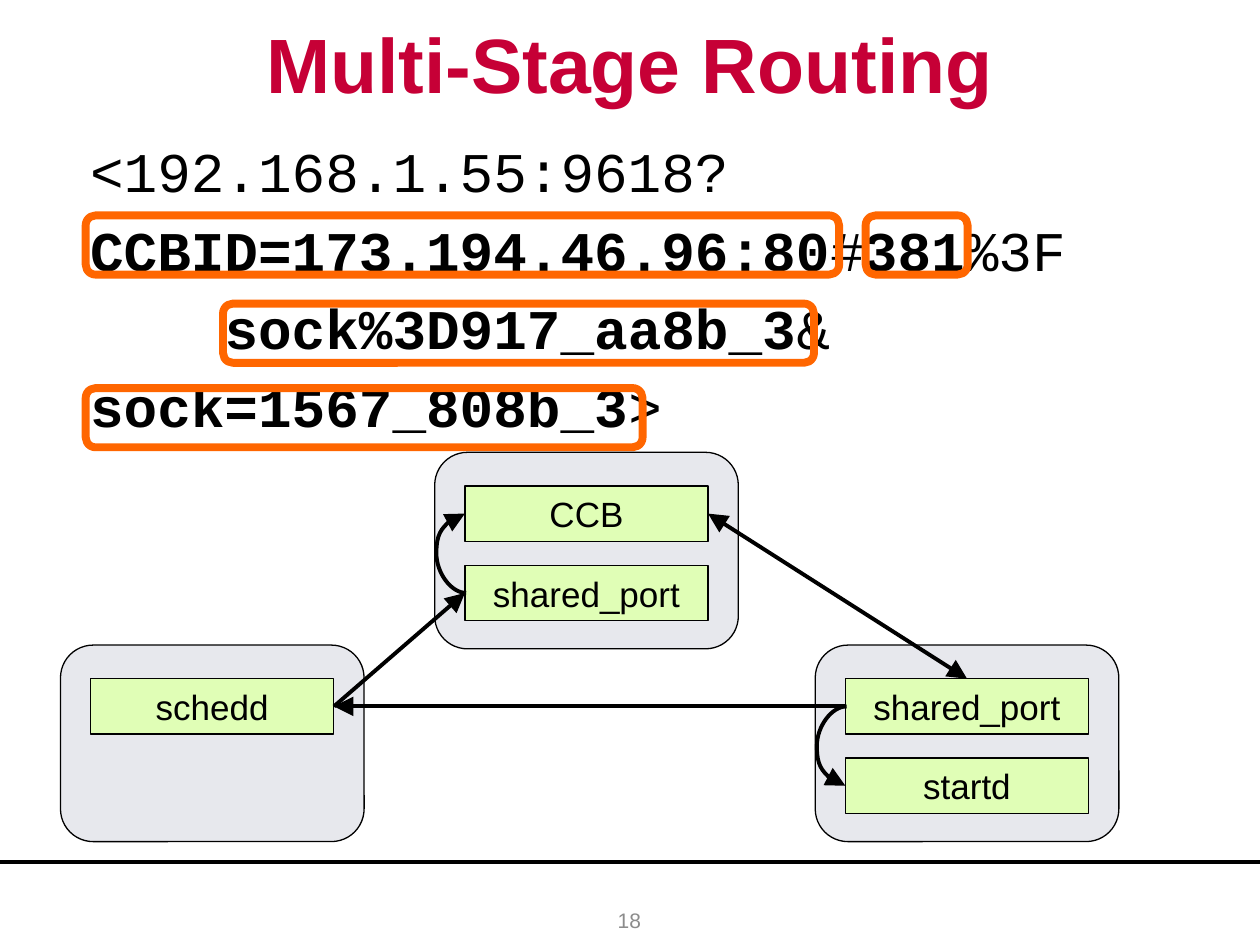
from dataclasses import dataclass

import pptx
import pptx.util
import pptx.dml.color
import pptx.enum.shapes
import pptx.enum.text
import pptx.oxml
import pptx.oxml.ns

SHAPE = pptx.enum.shapes.MSO_SHAPE
LINK = pptx.enum.shapes.MSO_CONNECTOR
ALIGN = pptx.enum.text.PP_ALIGN
ANCHOR = pptx.enum.text.MSO_ANCHOR
Pt = pptx.util.Pt

prs = pptx.Presentation()
prs.slide_width = pptx.util.Inches(10)
prs.slide_height = pptx.util.Inches(7.5)
s = prs.slides.add_slide(prs.slide_layouts[6])

# The slide is a grid of 100 columns by 100 rows.
COL = prs.slide_width / 100
ROW = prs.slide_height / 100
HOST_W, HOST_H = 24.1, 20.8
TASK_W, TASK_H = 19.3, 5.87
TASK_DX, TASK_DY, TASK_PITCH = 2.4, 3.55, 8.4
TOP, LEFT, RIGHT = 0, 1, 3  # connection sites of a rectangle
CODE_SIZE = 32
CODE_CELL = 0.6 * CODE_SIZE  # points per monospaced character


@dataclass
class CodeLine:
    indent: int  # characters
    runs: list[tuple[str, bool]]  # text, bold


@dataclass
class Host:
    col: float
    row: float
    tasks: list[str]


@dataclass
class Highlight:
    col: float
    row: float
    width: float


CODE = [
    CodeLine(1, [("<192.168.1.55:9618?", False)]),
    CodeLine(1, [("CCBID=173.194.46.96:80", True), ("#", False),
                 ("381", True), ("%3F", False)]),
    CodeLine(5, [("sock%3D917_aa8b_3", True), ("&", False)]),
    CodeLine(1, [("sock=1567_808b_3", True), (">", False)]),
]
HIGHLIGHTS = [
    Highlight(6.8, 22.8, 59.8),
    Highlight(68.7, 22.8, 8.1),
    Highlight(17.7, 32.13, 46.9),
    Highlight(6.8, 41.07, 44.2),
]
HOSTS = [
    Host(4.8, 68.27, ["schedd"]),
    Host(64.7, 68.27, ["shared_port", "startd"]),
    Host(34.5, 47.87, ["CCB", "shared_port"]),
]


def color(hex_code: str) -> pptx.dml.color.RGBColor:
    return pptx.dml.color.RGBColor.from_string(hex_code)


def grid(col: float, row: float, width: float, height: float) -> list[int]:
    return [round(col * COL), round(row * ROW), round(width * COL), round(height * ROW)]


def style_font(font, size: float, hex_code: str, name: str = "Arial", bold: bool = False) -> None:
    font.size, font.name, font.bold = Pt(size), name, bold
    font.color.rgb = color(hex_code)


def add_shape(kind, box: list[int], line: str, weight: float, fill: str = ""):
    sp = s.shapes.add_shape(kind, *box)
    sp.shadow.inherit = False
    if fill:
        sp.fill.solid()
        sp.fill.fore_color.rgb = color(fill)
    else:
        sp.fill.background()
    sp.line.color.rgb = color(line)
    sp.line.width = Pt(weight)
    return sp


def set_label(sp, text: str, size: float, hex_code: str, bold: bool = False) -> None:
    tf = sp.text_frame
    tf.word_wrap = True
    tf.vertical_anchor = ANCHOR.MIDDLE
    tf.text = text
    p = tf.paragraphs[0]
    p.alignment = ALIGN.CENTER
    style_font(p.runs[0].font, size, hex_code, bold=bold)


def add_code(box: list[int], lines: list[CodeLine]) -> None:
    tf = s.shapes.add_textbox(*box).text_frame
    tf.word_wrap = True
    for i, line in enumerate(lines):
        p = tf.add_paragraph() if i else tf.paragraphs[0]
        p.space_before = Pt(0.2 * CODE_SIZE if i else 0)
        p._p.get_or_add_pPr().set("marL", str(Pt(line.indent * CODE_CELL)))
        for text, bold in line.runs:
            r = p.add_run()
            r.text = text
            style_font(r.font, CODE_SIZE, "000000", "Courier New", bold)


def add_host(host: Host) -> list:
    """Draw a host with its stacked tasks and return the task shapes."""
    add_shape(SHAPE.ROUNDED_RECTANGLE, grid(host.col, host.row, HOST_W, HOST_H),
              "000000", 0.75, "E7E8ED")
    tasks = []
    for i, name in enumerate(host.tasks):
        box = grid(host.col + TASK_DX, host.row + TASK_DY + i * TASK_PITCH, TASK_W, TASK_H)
        sp = add_shape(SHAPE.RECTANGLE, box, "000000", 0.75, "E0FEB6")
        set_label(sp, name, 20, "000000")
        tasks.append(sp)
    return tasks


def add_line(kind, x1: int, y1: int, x2: int, y2: int, ends: tuple = ()):
    c = s.shapes.add_connector(kind, x1, y1, x2, y2)
    c.line.color.rgb = color("000000")
    c.line.width = Pt(2.25)
    ln = c.line._get_or_add_ln()
    for end in ends:
        ln.append(pptx.oxml.parse_xml(
            f'<a:{end} {pptx.oxml.ns.nsdecls("a")} type="triangle" w="lg" len="lg"/>'))
    c._element.spPr.append(pptx.oxml.parse_xml(
        f'<a:effectLst {pptx.oxml.ns.nsdecls("a")}/>'))
    return c


def add_route(source, source_site: int, target, target_site: int, both: bool = False) -> None:
    ends = ("headEnd", "tailEnd") if both else ("tailEnd",)
    c = add_line(LINK.STRAIGHT, 0, 0, 0, 0, ends)
    c.begin_connect(source, source_site)
    c.end_connect(target, target_site)


def add_handoff(source, target) -> None:
    """Curve out to the left from one task to another on the same host."""
    y1, y2 = (sp.top + sp.height // 2 for sp in (source, target))
    step = round(0.1 * COL)
    c = add_line(LINK.CURVE, source.left + step, y1, target.left, y2, ("tailEnd",))
    geom = c._element.spPr.find(pptx.oxml.ns.qn("a:prstGeom"))
    for old in list(geom):
        geom.remove(old)
    bulge = round(TASK_DX * COL / step * 100000)
    geom.append(pptx.oxml.parse_xml(
        f'<a:avLst {pptx.oxml.ns.nsdecls("a")}><a:gd name="adj1" fmla="val {bulge}"/></a:avLst>'))


rule_y = round(91.2 * ROW)
add_line(LINK.STRAIGHT, 0, rule_y, prs.slide_width, rule_y)
add_code(grid(3.5, 13.8, 91.9, 34), CODE)
set_label(s.shapes.add_textbox(*grid(0, 0, 100, 13.33)),
          "Multi-Stage Routing", 44, "C60036", bold=True)
set_label(s.shapes.add_textbox(*grid(38.3, 94.67, 23.3, 5.33)), "18", 12, "8C8C8C")

for mark in HIGHLIGHTS:
    add_shape(SHAPE.ROUNDED_RECTANGLE, grid(mark.col, mark.row, mark.width, 6.27), "FF6600", 4.5)

(schedd,), (startd_port, startd), (ccb, ccb_port) = [add_host(host) for host in HOSTS]

add_route(startd_port, TOP, ccb, RIGHT, both=True)
add_route(schedd, RIGHT, ccb_port, LEFT)
add_handoff(ccb_port, ccb)
add_route(startd_port, LEFT, schedd, RIGHT)
add_handoff(startd_port, startd)

prs.save("out.pptx")
